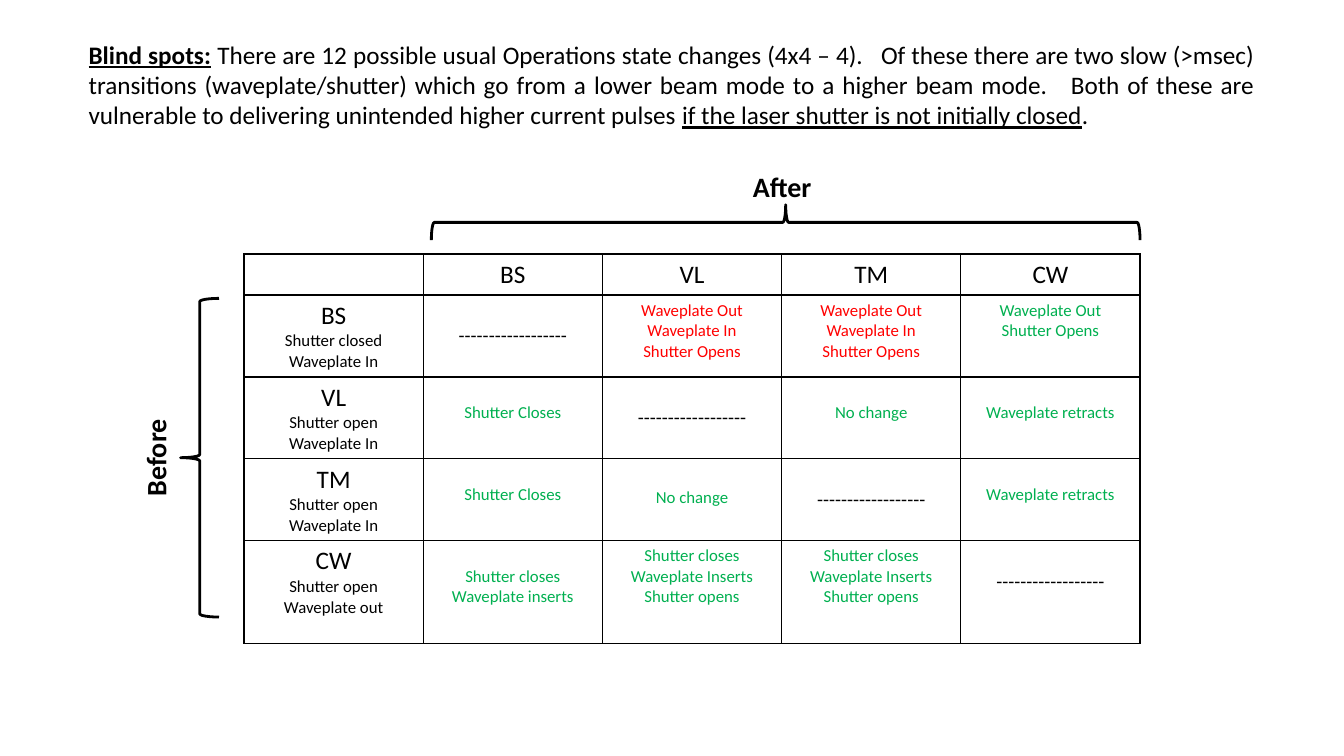
from lxml import etree
from pptx import Presentation
from pptx.dml.color import RGBColor
from pptx.enum.shapes import MSO_SHAPE
from pptx.enum.text import MSO_ANCHOR, MSO_AUTO_SIZE, PP_ALIGN
from pptx.oxml.ns import qn
from pptx.util import Cm, Pt

BLACK = RGBColor(0x00, 0x00, 0x00)
RED = RGBColor(0xFF, 0x00, 0x00)
GREEN = RGBColor(0x00, 0xB0, 0x50)
FONT = "Calibri"
CENTER, JUSTIFY = PP_ALIGN.CENTER, PP_ALIGN.JUSTIFY
TOP = MSO_ANCHOR.TOP
NO_FIT = MSO_AUTO_SIZE.NONE
LEFT_BRACE = MSO_SHAPE.LEFT_BRACE
TITLE_ONLY = 5

# Distance from the cell top to its text: at the top, or one line lower.
HIGH, LOW, LOWER = 0.13, 0.64, 0.73

INTRO = [  # text, bold, underline
    ("Blind spots:", True, True),
    (" ", True, False),
    ("There are 12 possible usual Operations state changes (4x4 – 4).   "
     "Of these there are two slow (>msec) transitions (waveplate/shutter) "
     "which go from a lower beam mode to a higher beam mode.   Both of these "
     "are vulnerable to delivering unintended higher current pulses ", False, False),
    ("if the laser shutter is not initially closed", False, True),
    (".", False, False),
]

MODES = ["BS", "VL", "TM", "CW"]
SETTINGS = [
    "Shutter closed\nWaveplate In",
    "Shutter open\nWaveplate In",
    "Shutter open\nWaveplate In",
    "Shutter open\nWaveplate out",
]
SAME = ("------------------", BLACK, 14, LOWER)
RISKY = ("Waveplate Out\nWaveplate In\nShutter Opens", RED, 12, HIGH)
CLOSES = ("Shutter Closes", GREEN, 12, LOW)
RETRACTS = ("Waveplate retracts", GREEN, 12, LOW)
CYCLE = ("Shutter closes\nWaveplate Inserts\nShutter opens", GREEN, 12, HIGH)
CHANGES = [
    [SAME, RISKY, RISKY, ("Waveplate Out\nShutter Opens", GREEN, 12, HIGH)],
    [CLOSES, SAME, ("No change", GREEN, 12, LOW), RETRACTS],
    [CLOSES, ("No change", GREEN, 12, LOWER), SAME, RETRACTS],
    [("Shutter closes\nWaveplate inserts", GREEN, 12, LOW), CYCLE, CYCLE, SAME],
]
ROW_HEIGHTS = [1.03, 2.06, 2.06, 2.06, 2.58]


def style(font, size, color=BLACK, bold=False):
    font.name, font.size, font.bold = FONT, Pt(size), bold
    font.color.rgb = color


def turned_box(x, y, w, h):
    """Return the unturned box that covers x, y, w, h after a quarter turn."""
    return x + (w - h) / 2, y + (h - w) / 2, h, w


def add_intro(s, x, y, w, h):
    sp = s.shapes.title
    sp.left, sp.top, sp.width, sp.height = Cm(x), Cm(y), Cm(w), Cm(h)
    tf = sp.text_frame
    tf.word_wrap, tf.auto_size, tf.vertical_anchor = True, NO_FIT, TOP
    p = tf.paragraphs[0]
    p.alignment = JUSTIFY
    for text, bold, underline in INTRO:
        r = p.add_run()
        r.text = text
        style(r.font, 18, bold=bold)
        r.font.underline = underline


def add_label(s, text, x, y, w, h, rotation=0):
    if rotation:
        x, y, w, h = turned_box(x, y, w, h)
    sp = s.shapes.add_textbox(Cm(x), Cm(y), Cm(w), Cm(h))
    sp.rotation = rotation
    tf = sp.text_frame
    tf.word_wrap = True
    tf.text = text
    p = tf.paragraphs[0]
    p.alignment = CENTER
    style(p.runs[0].font, 20, bold=True)


def add_brace(s, x, y, w, h, rotation=0):
    if rotation:
        x, y, w, h = turned_box(x, y, w, h)
    sp = s.shapes.add_shape(LEFT_BRACE, Cm(x), Cm(y), Cm(w), Cm(h))
    sp.rotation = rotation
    sp.shadow.inherit = False
    sp.fill.background()
    sp.line.color.rgb = BLACK
    sp.line.width = Pt(2)


def add_borders(cell):
    tc_pr = cell._tc.get_or_add_tcPr()
    for i, side in enumerate(("a:lnL", "a:lnR", "a:lnT", "a:lnB")):
        ln = etree.Element(qn(side), w=str(Pt(1)))
        fill = etree.SubElement(ln, qn("a:solidFill"))
        etree.SubElement(fill, qn("a:srgbClr"), val=str(BLACK))
        tc_pr.insert(i, ln)


def fill_cell(cell, text, color, size, margin_top, first_size=None):
    cell.margin_top = Cm(margin_top)
    cell.text_frame.text = text
    for i, p in enumerate(cell.text_frame.paragraphs):
        p.alignment = CENTER
        line_size = first_size if first_size and i == 0 else size
        for r in p.runs:
            style(r.font, line_size, color)


def add_state_table(s, x, y, w):
    rows, cols = len(MODES) + 1, len(MODES) + 1
    frame = s.shapes.add_table(rows, cols, Cm(x), Cm(y), Cm(w), Cm(sum(ROW_HEIGHTS)))
    table = frame.table
    table.first_row = table.horz_banding = False
    for col in table.columns:
        col.width = Cm(w / cols)
    for row, height in zip(table.rows, ROW_HEIGHTS):
        row.height = Cm(height)
    for cell in table.iter_cells():
        cell.fill.background()
        add_borders(cell)
    for i, (mode, settings) in enumerate(zip(MODES, SETTINGS), start=1):
        fill_cell(table.cell(0, i), mode, BLACK, 18, HIGH)
        fill_cell(table.cell(i, 0), f"{mode}\n{settings}", BLACK, 12, HIGH, first_size=18)
        for j, change in enumerate(CHANGES[i - 1], start=1):
            fill_cell(table.cell(i, j), *change)


def add_state_diagram(s, x, y, w):
    """Place the table with its corner at x, y and the braces outside it."""
    add_state_table(s, x, y, w)
    add_brace(s, x - 1.6, y + 1.12, 0.97, 8.03)
    add_label(s, "Before", x - 2.79, y + 3.1, 1.12, 4.06, rotation=270)
    add_brace(s, x + 4.72, y - 1.24, 17.86, 0.89, rotation=90)
    add_label(s, "After", x + 11.53, y - 2.26, 4.06, 1.12)


def main():
    prs = Presentation()
    prs.slide_width, prs.slide_height = Cm(33.87), Cm(19.05)
    s = prs.slides.add_slide(prs.slide_layouts[TITLE_ONLY])
    add_intro(s, 1.98, 0.86, 29.9, 2.57)
    add_state_diagram(s, 6.15, 6.4, 22.58)
    prs.save("out.pptx")


if __name__ == "__main__":
    main()
